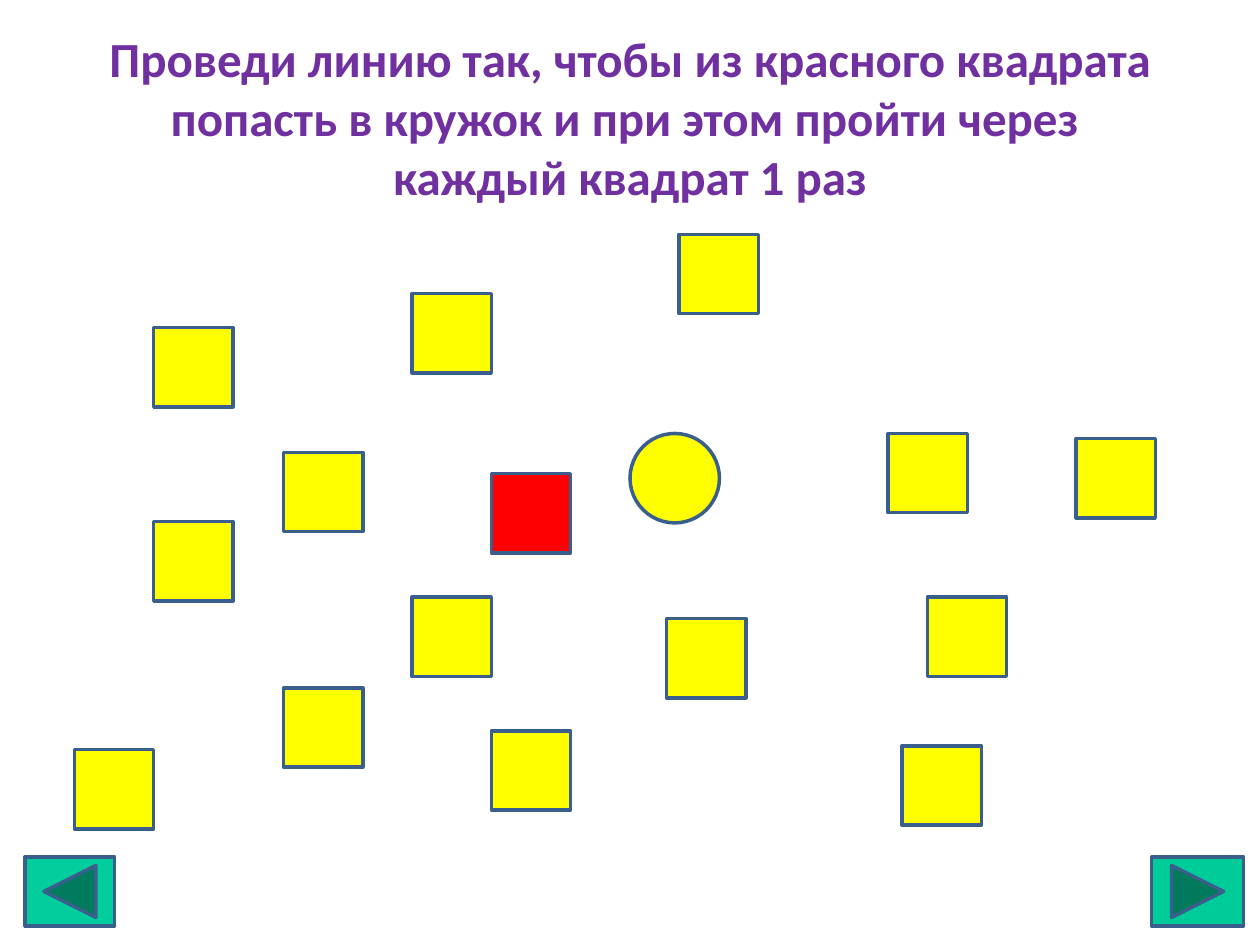
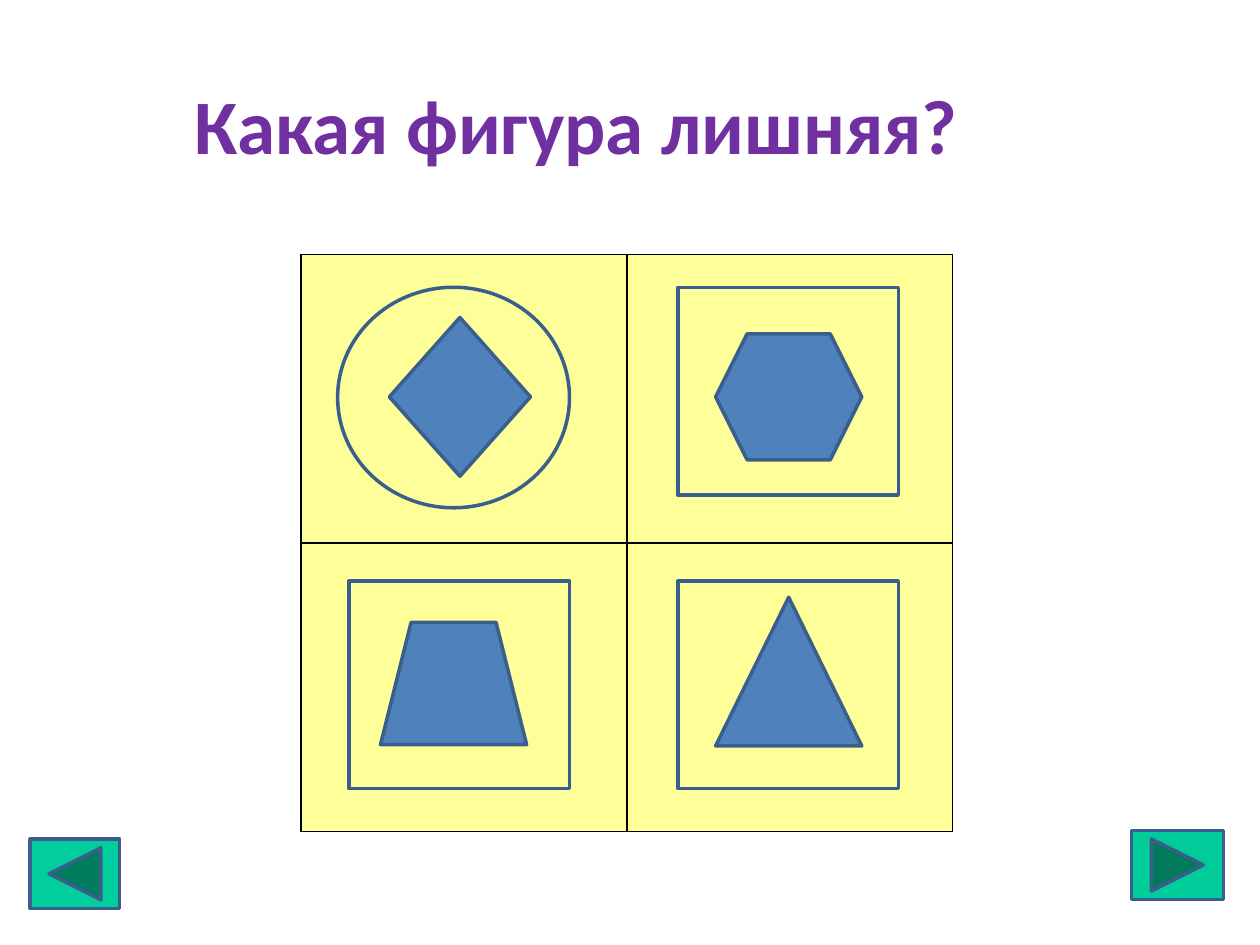
from lxml import etree
from pptx import Presentation
from pptx.dml.color import RGBColor
from pptx.enum.shapes import MSO_SHAPE
from pptx.enum.text import MSO_ANCHOR, PP_ALIGN
from pptx.oxml.ns import qn
from pptx.util import Inches, Pt

RECT, OVAL = MSO_SHAPE.RECTANGLE, MSO_SHAPE.OVAL
DIAMOND, HEXAGON = MSO_SHAPE.DIAMOND, MSO_SHAPE.HEXAGON
TRAPEZOID, TRIANGLE = MSO_SHAPE.TRAPEZOID, MSO_SHAPE.ISOSCELES_TRIANGLE
NEXT = MSO_SHAPE.ACTION_BUTTON_FORWARD_OR_NEXT
BACK = MSO_SHAPE.ACTION_BUTTON_BACK_OR_PREVIOUS
CENTER, MIDDLE = PP_ALIGN.CENTER, MSO_ANCHOR.MIDDLE

COLORS = {
    "title": "7030A0", "outline": "3A5F8C", "yellow": "FFFF00", "red": "FF0000",
    "figure": "4F81BD", "cell": "FFFF99", "border": "000000",
    "next": "00CC99", "back": "02CE9D",
}
FONT = "Calibri"
SQUARE = 0.63
YELLOW_SQUARES = [
    (1.22, 2.6), (2.25, 3.59), (7.16, 5.92), (7.36, 4.74), (7.05, 3.44),
    (3.27, 2.33), (5.39, 1.86), (3.27, 4.74), (2.25, 5.46), (0.59, 5.95),
    (5.29, 4.91), (3.9, 5.8), (8.54, 3.48), (1.22, 4.14),
]
# Each pair: frame kind and place, then inner figure kind and place
FRAMED_FIGURES = [
    (OVAL, (2.68, 2.28, 1.84, 1.75), DIAMOND, (3.09, 2.52, 1.12, 1.26)),
    (RECT, (5.38, 2.28, 1.75, 1.65), HEXAGON, (5.68, 2.65, 1.16, 1)),
    (RECT, (2.77, 4.61, 1.75, 1.65), TRAPEZOID, (3.02, 4.94, 1.16, 0.97)),
    (RECT, (5.38, 4.61, 1.75, 1.65), TRIANGLE, (5.68, 4.74, 1.16, 1.18)),
]


def rgb(name):
    return RGBColor.from_string(COLORS[name])


def inches(box):
    return [Inches(v) for v in box]


def write(tf, text, *, size, color, bold=False, align=CENTER, anchor=MIDDLE):
    tf.word_wrap = True
    tf.vertical_anchor = anchor
    p = tf.paragraphs[0]
    p.alignment = align
    p.text = text
    for r in p.runs:
        r.font.name, r.font.size, r.font.bold = FONT, Pt(size), bold
        r.font.color.rgb = rgb(color)


def set_borders(cell, color, width):
    tc_pr = cell._tc.get_or_add_tcPr()
    for i, side in enumerate(("lnL", "lnR", "lnT", "lnB")):
        ln = etree.Element(qn(f"a:{side}"), w=str(Pt(width)))
        fill = etree.SubElement(ln, qn("a:solidFill"))
        etree.SubElement(fill, qn("a:srgbClr"), val=COLORS[color])
        tc_pr.insert(i, ln)


class Deck:
    def __init__(self):
        self.prs = Presentation()
        self.prs.slide_width, self.prs.slide_height = Inches(10), Inches(7.5)
        self.s = None

    def slide(self):
        self.s = self.prs.slides.add_slide(self.prs.slide_layouts[6])

    def title(self, text, box, size):
        sp = self.s.shapes.add_textbox(*inches(box))
        write(sp.text_frame, text, size=size, color="title", bold=True)

    def shape(self, kind, box, fill=None, parent=None):
        shapes = (parent or self.s).shapes
        sp = shapes.add_shape(kind, *inches(box))
        sp.shadow.inherit = False
        if fill:
            sp.fill.solid()
            sp.fill.fore_color.rgb = rgb(fill)
        else:
            sp.fill.background()
        sp.line.color.rgb = rgb("outline")
        sp.line.width = Pt(2)

    def framed_figure(self, frame, frame_box, figure, figure_box):
        group = self.s.shapes.add_group_shape()
        self.shape(frame, frame_box, parent=group)
        self.shape(figure, figure_box, "figure", parent=group)

    def grid(self, box, rows, cols):
        """Add an empty table with filled, bordered cells."""
        table = self.s.shapes.add_table(rows, cols, *inches(box)).table
        table.first_row = table.horz_banding = False
        for cell in table.iter_cells():
            cell.fill.solid()
            cell.fill.fore_color.rgb = rgb("cell")
            set_borders(cell, "border", 1)

    def navigation(self, next_at, back_at):
        self.shape(NEXT, (*next_at, 0.73, 0.55), "next")
        self.shape(BACK, (*back_at, 0.71, 0.55), "back")


def line_puzzle(deck):
    deck.slide()
    deck.title("Проведи линию так, чтобы из красного квадрата попасть в кружок "
               "и при этом пройти через \vкаждый квадрат 1 раз",
               (0.5, 0.3, 9, 1.25), 28)
    for at in YELLOW_SQUARES:
        deck.shape(RECT, (*at, SQUARE, SQUARE), "yellow")
    deck.shape(RECT, (3.9, 3.76, SQUARE, SQUARE), "red")
    deck.shape(OVAL, (5, 3.44, 0.71, 0.71), "yellow")
    deck.navigation((9.14, 6.8), (0.2, 6.8))


def odd_one_out(deck):
    deck.slide()
    deck.title("Какая фигура лишняя?", (0.75, 0.36, 7.65, 1.25), 44)
    deck.grid((2.39, 2.02, 5.17, 4.58), rows=2, cols=2)
    for framed in FRAMED_FIGURES:
        deck.framed_figure(*framed)
    deck.navigation((8.98, 6.59), (0.24, 6.66))


def main():
    deck = Deck()
    line_puzzle(deck)
    odd_one_out(deck)
    deck.prs.save("out.pptx")


if __name__ == "__main__":
    main()
